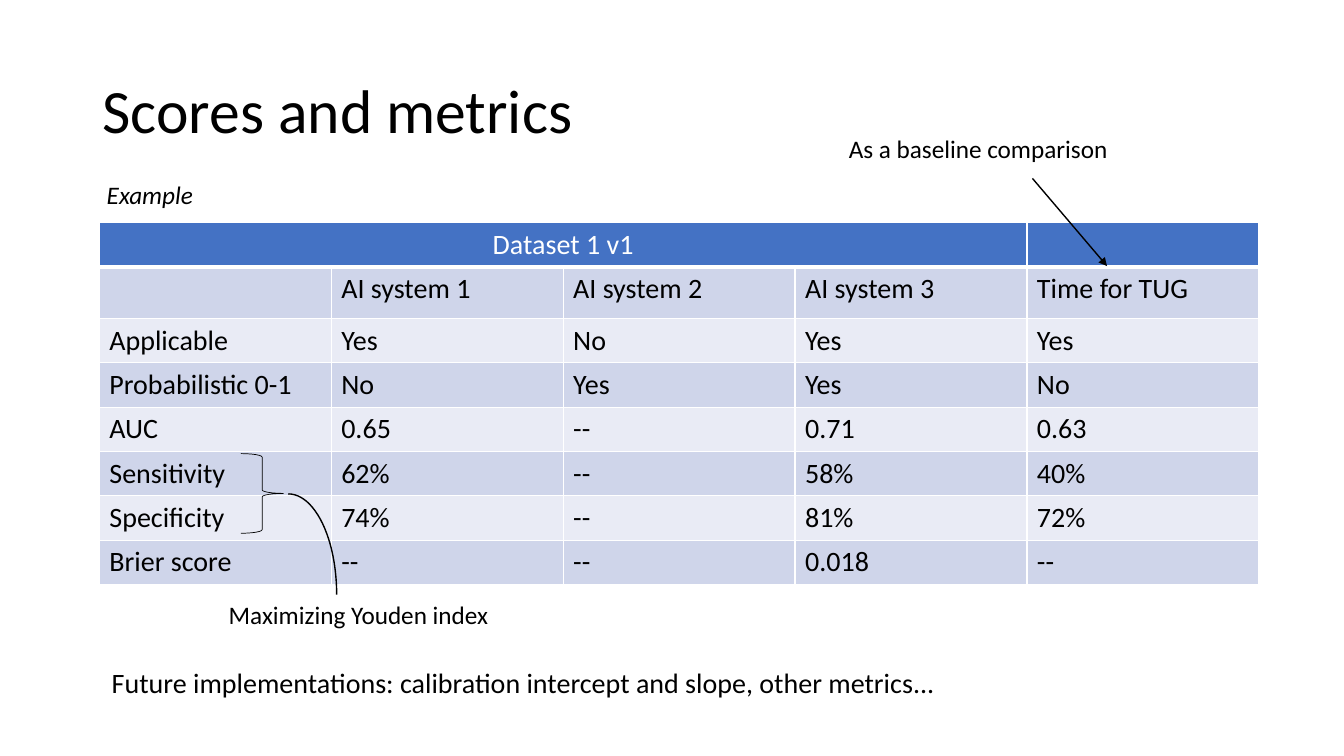
from dataclasses import dataclass

from lxml.etree import SubElement
from pptx import Presentation
from pptx.dml.color import RGBColor
from pptx.enum.shapes import MSO_CONNECTOR as Connector, MSO_SHAPE as Shape
from pptx.enum.text import MSO_ANCHOR as Anchor, PP_ALIGN as Align
from pptx.oxml.ns import qn
from pptx.util import Inches, Pt


@dataclass(frozen=True)
class Theme:
    font: str = "Calibri"
    ink: str = "000000"
    paper: str = "FFFFFF"
    header: str = "4472C4"
    bands: tuple = ("CFD5EA", "E9EBF5")
    title_size: int = 44
    body_size: int = 20
    note_size: int = 18
    thin: float = 0.5
    line: float = 1
    thick: float = 3


METRICS = [
    ["Dataset 1 v1", "", "", "", ""],
    ["", "AI system 1", "AI system 2", "AI system 3", "Time for TUG"],
    ["Applicable", "Yes", "No", "Yes", "Yes"],
    ["Probabilistic 0-1", "No", "Yes", "Yes", "No"],
    ["AUC", "0.65", "--", "0.71", "0.63"],
    ["Sensitivity", "62%", "--", "58%", "40%"],
    ["Specificity", "74%", "--", "81%", "72%"],
    ["Brier score", "--", "--", "0.018", "--"],
]
CELLS_PER_INCH = 10


def grid(*cells):
    return [Inches(cell / CELLS_PER_INCH) for cell in cells]


def write_text(frame, text, *, size, color, font, italic=False,
               align=Align.LEFT, spacing=1.0):
    paragraph = frame.paragraphs[0]
    paragraph.alignment = align
    paragraph.line_spacing = spacing
    run = paragraph.add_run()
    run.text = text
    run.font.name = font
    run.font.size = Pt(size)
    run.font.bold = False
    run.font.italic = italic
    run.font.color.rgb = RGBColor.from_string(color)


class SlideBuilder:
    def __init__(self, slide, theme):
        self.slide = slide
        self.theme = theme

    def text(self, text, left, top, width, height, *, size,
             anchor=Anchor.TOP, **style):
        box = self.slide.shapes.add_textbox(*grid(left, top, width, height))
        frame = box.text_frame
        frame.word_wrap = True
        frame.vertical_anchor = anchor
        write_text(frame, text, size=size, color=self.theme.ink,
                   font=self.theme.font, **style)

    def outline(self, kind, left, top, width, height, *, weight):
        shape = self.slide.shapes.add_shape(kind, *grid(left, top, width, height))
        shape.shadow.inherit = False
        shape.fill.background()
        self.stroke(shape.line, weight)

    def arrow(self, start, end):
        connector = self.slide.shapes.add_connector(
            Connector.STRAIGHT, *grid(*start, *end))
        self.stroke(connector.line, self.theme.line)
        properties = connector.element.spPr
        SubElement(properties.find(qn("a:ln")), qn("a:tailEnd"), type="triangle")
        SubElement(properties, qn("a:effectLst"))

    def stroke(self, line, weight):
        line.color.rgb = RGBColor.from_string(self.theme.ink)
        line.width = Pt(weight)

    def cell_borders(self, cell, row_number):
        thick_side = {0: "lnB", 1: "lnT"}.get(row_number)
        properties = cell._tc.get_or_add_tcPr()
        for side in ("lnL", "lnR", "lnT", "lnB"):
            weight = self.theme.thick if side == thick_side else self.theme.line
            border = SubElement(properties, qn(f"a:{side}"), w=str(Pt(weight)))
            fill = SubElement(border, qn("a:solidFill"))
            SubElement(fill, qn("a:srgbClr"), val=self.theme.paper)

    def table(self, rows, left, top, column_width, row_heights):
        theme = self.theme
        columns = len(rows[0])
        table = self.slide.shapes.add_table(
            len(rows), columns,
            *grid(left, top, column_width * columns, sum(row_heights))).table
        table.first_row = table.horz_banding = False
        for column in table.columns:
            column.width = grid(column_width)[0]
        for row_number, values in enumerate(rows):
            is_header = row_number == 0
            table.rows[row_number].height = grid(row_heights[row_number])[0]
            background = theme.header if is_header else theme.bands[(row_number - 1) % 2]
            for column_number, value in enumerate(values):
                cell = table.cell(row_number, column_number)
                self.cell_borders(cell, row_number)
                cell.fill.solid()
                cell.fill.fore_color.rgb = RGBColor.from_string(background)
                if value:
                    write_text(cell.text_frame, value, size=theme.body_size,
                               color=theme.paper if is_header else theme.ink,
                               font=theme.font,
                               align=Align.CENTER if is_header else Align.LEFT)
        table.cell(0, 0).merge(table.cell(0, columns - 2))


def main():
    presentation = Presentation()
    presentation.slide_width, presentation.slide_height = Inches(13.33), Inches(7.5)
    slide = presentation.slides.add_slide(presentation.slide_layouts[6])
    theme = Theme()
    builder = SlideBuilder(slide, theme)

    builder.text("Scores and metrics", 9.2, 4, 115, 14.5,
                 size=theme.title_size, anchor=Anchor.MIDDLE, spacing=0.9)
    row_heights = [4.4, 5.1] + [4.4] * (len(METRICS) - 2)
    builder.table(METRICS, 9.85, 22.1, 23, row_heights)
    builder.text("Maximizing Youden index", 21.7, 59, 30, 4, size=theme.note_size)
    builder.outline(Shape.RIGHT_BRACE, 23.9, 45, 4.2, 7.9, weight=theme.thin)
    builder.outline(Shape.ARC, 23.8, 49, 9.6, 20, weight=theme.line)
    builder.text(
        "Future implementations: calibration intercept and slope, other metrics...",
        10.1, 65.5, 100.3, 4.4, size=theme.body_size)
    builder.text("Example", 9.6, 17.3, 19.5, 4.2, size=theme.note_size, italic=True)
    builder.arrow((102.4, 17.7), (109.8, 26.4))
    builder.text("As a baseline comparison", 83.2, 12.7, 30, 4, size=theme.note_size)

    presentation.save("out.pptx")


if __name__ == "__main__":
    main()
